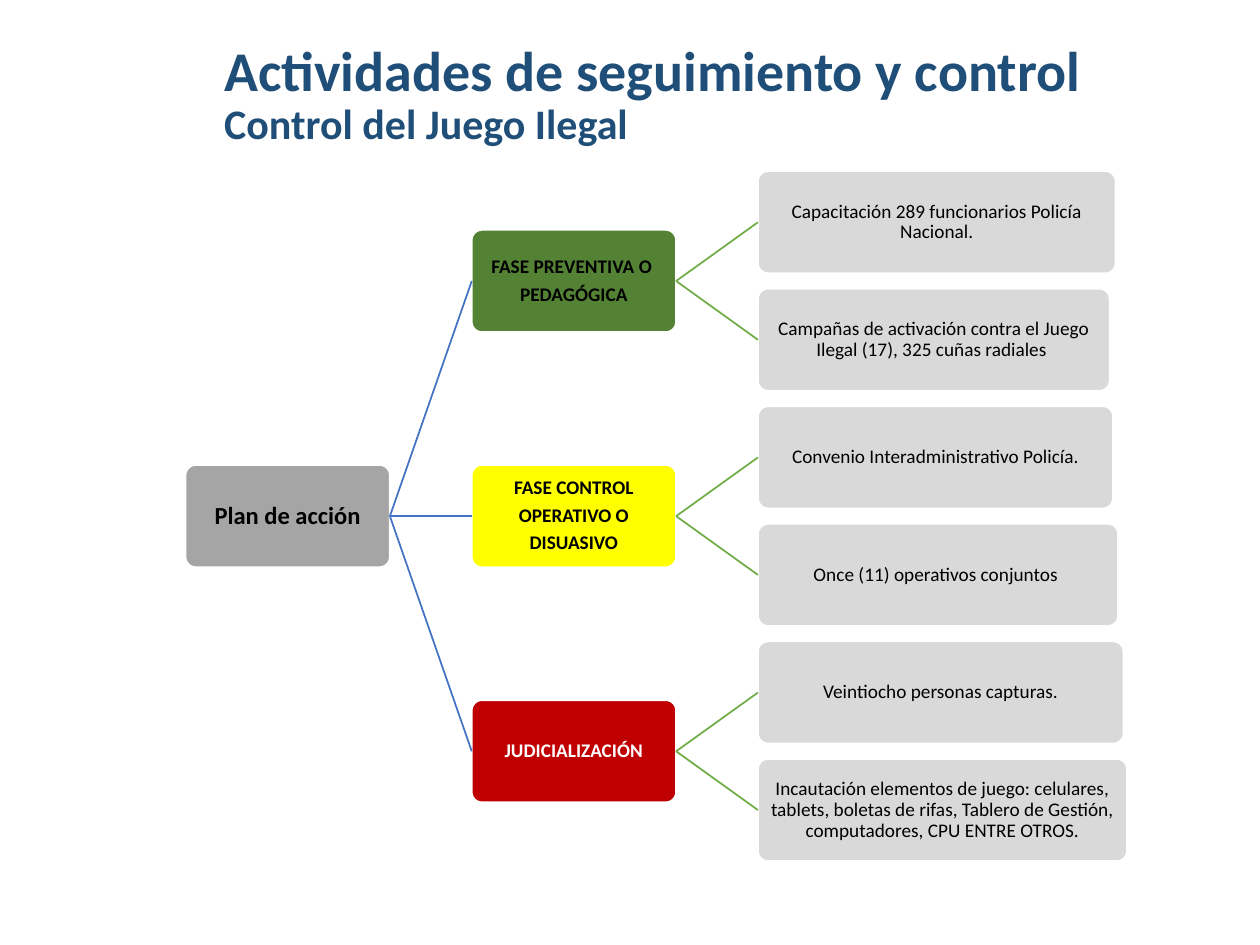
from dataclasses import dataclass

from lxml import etree
from pptx import Presentation
from pptx.dml.color import RGBColor
from pptx.enum.shapes import MSO_CONNECTOR, MSO_SHAPE
from pptx.enum.text import MSO_ANCHOR, PP_ALIGN
from pptx.oxml.ns import qn
from pptx.shapes.autoshape import Shape
from pptx.slide import Slide
from pptx.text.text import TextFrame
from pptx.util import Cm, Pt

ROUNDED = MSO_SHAPE.ROUNDED_RECTANGLE
STRAIGHT = MSO_CONNECTOR.STRAIGHT
MIDDLE, BOTTOM = MSO_ANCHOR.MIDDLE, MSO_ANCHOR.BOTTOM
CENTER, LEFT = PP_ALIGN.CENTER, PP_ALIGN.LEFT
LEFT_SIDE, RIGHT_SIDE = 1, 3

TREE_LEFT, TREE_TOP = 3.74, 3.45
COLUMN_STEP, ROW_STEP = 5.77, 2.37
BOX_WIDTH, BOX_HEIGHT = 4.12, 2.06
BLUE, GREEN, GREY, BLACK, WHITE = "4472C4", "70AD47", "D9D9D9", "000000", "FFFFFF"
TITLE_COLOR = "1F4E79"
BOX_FRAME = {"vertical_anchor": MIDDLE, "word_wrap": True} | {
    f"margin_{side}": Cm(0.03) for side in ("left", "top", "right", "bottom")
}
TITLE_FRAME = {"vertical_anchor": BOTTOM, "word_wrap": True}


@dataclass(frozen=True)
class Node:
    """A box of the tree, placed by its column and row."""

    lines: tuple[str, ...]
    column: int
    row: float
    fill: str = GREY
    width: float = BOX_WIDTH
    size: int = 11
    bold: bool = False
    color: str = BLACK


@dataclass(frozen=True)
class Phase:
    """A phase of the plan with the actions that belong to it."""

    heading: Node
    actions: tuple[Node, ...]


PLAN = Node(("Plan de acción",), 0, 2.5, "A5A5A5", size=14, bold=True)
PHASES = (
    Phase(
        Node(("FASE PREVENTIVA O ", "PEDAGÓGICA"), 1, 0.5, "548235", bold=True),
        (
            Node(("Capacitación 289 funcionarios Policía Nacional.",), 2, 0, width=7.21),
            Node(("Campañas de activación contra el Juego Ilegal (17), 325 cuñas radiales ",),
                 2, 1, width=7.09),
        ),
    ),
    Phase(
        Node(("FASE CONTROL", "OPERATIVO O", "DISUASIVO"), 1, 2.5, "FFFF00", bold=True),
        (
            Node(("Convenio Interadministrativo Policía.",), 2, 2, width=7.16),
            Node(("Once (11) operativos conjuntos ",), 2, 3, width=7.26),
        ),
    ),
    Phase(
        Node(("JUDICIALIZACIÓN",), 1, 4.5, "C00000", bold=True, color=WHITE),
        (
            Node(("Veintiocho personas capturas.",), 2, 4, width=7.37),
            Node(("Incautación elementos de juego: celulares, tablets, boletas de rifas, "
                  "Tablero de Gestión, computadores, CPU ENTRE OTROS.",), 2, 5, width=7.44),
        ),
    ),
)


def rgb(value: str) -> RGBColor:
    """Turn a hex string into a colour."""
    return RGBColor.from_string(value)


def apply_format(target: object, values: dict[str, object]) -> None:
    """Set every attribute named in the format values."""
    for attribute, value in values.items():
        setattr(target, attribute, value)


def write_line(frame: TextFrame, index: int, text: str, size: int, bold: bool,
               color: str, layout: dict[str, object]) -> None:
    """Write one formatted paragraph into a text frame."""
    paragraph = frame.add_paragraph() if index else frame.paragraphs[0]
    apply_format(paragraph, {"line_spacing": 0.9} | layout)
    run = paragraph.add_run()
    run.text = text
    apply_format(run.font, {"name": "Calibri", "size": Pt(size), "bold": bold})
    run.font.color.rgb = rgb(color)


def draw_title(slide: Slide) -> None:
    """Draw the title with its subtitle."""
    title = slide.shapes.add_textbox(Cm(4.27), Cm(0.33), Cm(19.53), Cm(2.79))
    apply_format(title.text_frame, TITLE_FRAME)
    headings = (("Actividades de seguimiento y control", 32), ("Control del Juego Ilegal", 24))
    for index, (text, size) in enumerate(headings):
        write_line(title.text_frame, index, text, size, True, TITLE_COLOR, {"alignment": LEFT})


def draw_node(slide: Slide, node: Node) -> Shape:
    """Draw one box of the tree and return it."""
    box = slide.shapes.add_shape(
        ROUNDED,
        Cm(TREE_LEFT + node.column * COLUMN_STEP),
        Cm(TREE_TOP + node.row * ROW_STEP),
        Cm(node.width),
        Cm(BOX_HEIGHT),
    )
    box.adjustments[0] = 0.1
    box.shadow.inherit = False
    box.fill.solid()
    box.fill.fore_color.rgb = rgb(node.fill)
    box.line.color.rgb = rgb(WHITE)
    box.line.width = Pt(1)
    apply_format(box.text_frame, BOX_FRAME)
    layout = {"alignment": CENTER, "space_after": Pt(round(0.35 * node.size, 2))}
    for index, text in enumerate(node.lines):
        write_line(box.text_frame, index, text, node.size, node.bold, node.color, layout)
    return box


def draw_branch(slide: Slide, parent: Shape, child: Shape, color: str) -> None:
    """Join the right side of a parent to the left side of its child."""
    branch = slide.shapes.add_connector(STRAIGHT, 0, 0, 0, 0)
    branch.begin_connect(parent, RIGHT_SIDE)
    branch.end_connect(child, LEFT_SIDE)
    branch.line.color.rgb = rgb(color)
    branch.line.width = Pt(1)
    etree.SubElement(branch._element.spPr, qn("a:effectLst"))


def main() -> None:
    """Build the slide and save it."""
    presentation = Presentation()
    apply_format(presentation, {"slide_width": Cm(25.4), "slide_height": Cm(19.05)})
    slide = presentation.slides.add_slide(presentation.slide_layouts[6])
    draw_title(slide)
    plan = draw_node(slide, PLAN)
    for phase in PHASES:
        heading = draw_node(slide, phase.heading)
        draw_branch(slide, plan, heading, BLUE)
        for action in phase.actions:
            draw_branch(slide, heading, draw_node(slide, action), GREEN)
    presentation.save("out.pptx")


if __name__ == "__main__":
    main()
